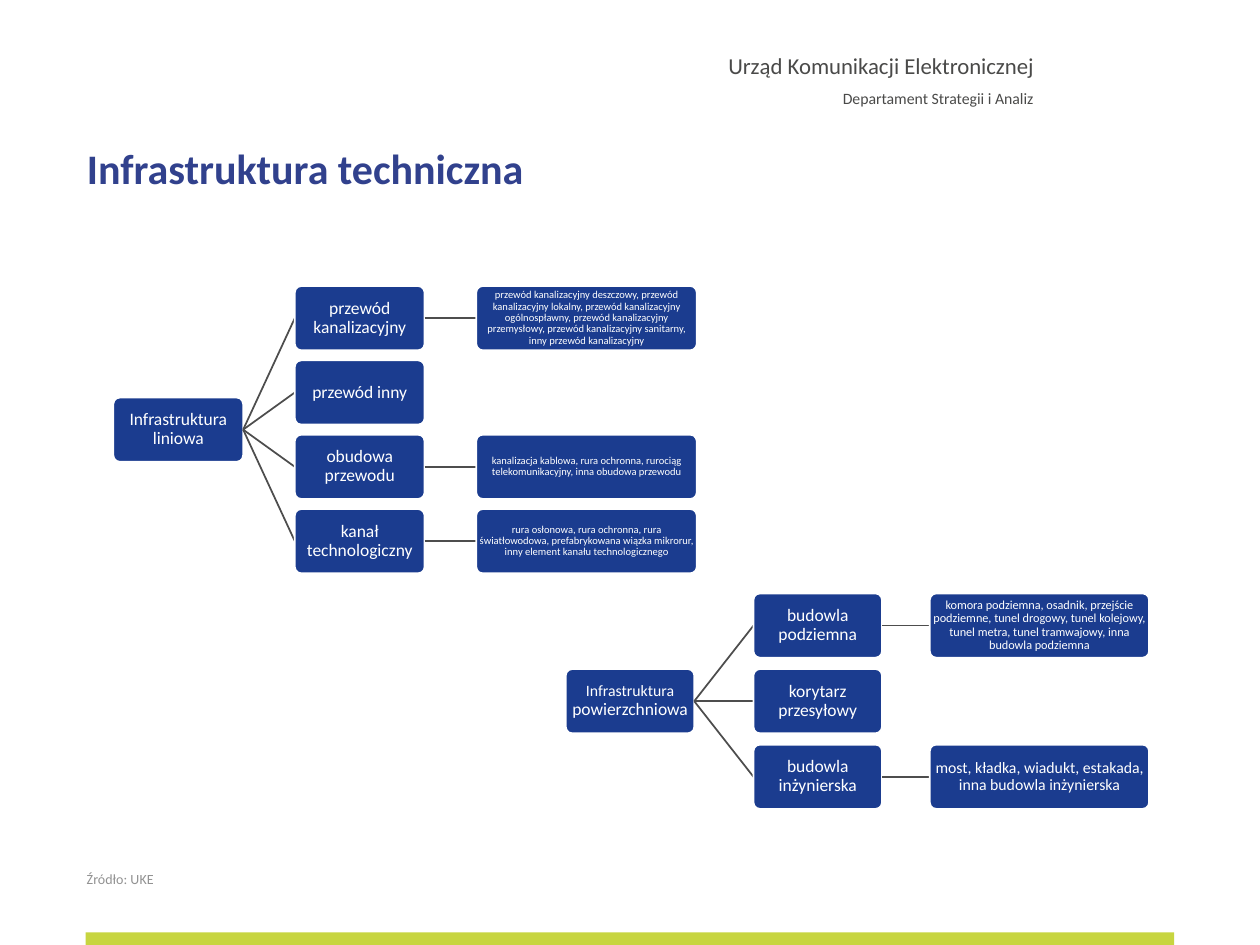
"""Build the slide showing the two branches of technical infrastructure."""
from pptx import Presentation
from pptx.dml.color import RGBColor
from pptx.enum.shapes import MSO_CONNECTOR as Connector, MSO_SHAPE as Shape
from pptx.enum.text import MSO_ANCHOR as Anchor, MSO_AUTO_SIZE as AutoSize, PP_ALIGN as Align
from pptx.oxml.ns import qn
from pptx.util import Inches, Pt
from lxml import etree

LINEAR = [
    ("przewód kanalizacyjny", "przewód kanalizacyjny deszczowy, przewód kanalizacyjny lokalny, "
     "przewód kanalizacyjny ogólnospławny, przewód kanalizacyjny przemysłowy, "
     "przewód kanalizacyjny sanitarny, inny przewód kanalizacyjny", 6),
    ("przewód inny", None, None),
    ("obudowa przewodu", "kanalizacja kablowa, rura ochronna, rurociąg telekomunikacyjny, "
     "inna obudowa przewodu", 6),
    ("kanał technologiczny", "rura osłonowa, rura ochronna, rura światłowodowa, "
     "prefabrykowana wiązka mikrorur, inny element kanału technologicznego", 6),
]
SURFACE = [
    ("budowla podziemna", "komora podziemna, osadnik, przejście podziemne, tunel drogowy, "
     "tunel kolejowy, tunel metra, tunel tramwajowy, inna budowla podziemna", 7),
    ("korytarz przesyłowy", None, None),
    ("budowla inżynierska", "most, kładka, wiadukt, estakada, inna budowla inżynierska", 9),
]


def color(value):
    return RGBColor.from_string(value)


class SlideBuilder:
    font = "Calibri"
    navy, white, gray = "1B3C8F", "FFFFFF", "4D4D4D"
    box_height = 0.51

    def __init__(self, presentation):
        self.slide = presentation.slides.add_slide(presentation.slide_layouts[5])

    def style(self, run, size, hex_color, bold=False):
        run.font.name = self.font
        run.font.size = Pt(size)
        run.font.bold = bold
        run.font.color.rgb = color(hex_color)

    def title(self, text, left, top, width, height):
        shape = self.slide.shapes.title
        shape.left, shape.top = Inches(left), Inches(top)
        shape.width, shape.height = Inches(width), Inches(height)
        frame = shape.text_frame
        frame.text = text
        frame.auto_size = AutoSize.NONE
        frame.vertical_anchor = Anchor.TOP
        frame.margin_left, frame.margin_right = 0, Inches(0.1)
        frame.margin_top = frame.margin_bottom = Inches(0.2)
        paragraph = frame.paragraphs[0]
        paragraph.alignment = Align.LEFT
        paragraph.line_spacing = 0.9
        self.style(paragraph.runs[0], 24, "31418D", bold=True)

    def text(self, lines, left, top, width, height, hex_color, align=Align.LEFT):
        shape = self.slide.shapes.add_textbox(
            Inches(left), Inches(top), Inches(width), Inches(height))
        frame = shape.text_frame
        frame.word_wrap = True
        frame.text = "\n".join(text for text, _, _ in lines)
        for paragraph, (_, size, spacing) in zip(frame.paragraphs, lines):
            paragraph.alignment = align
            paragraph.line_spacing = spacing
            self.style(paragraph.runs[0], size, hex_color)

    def bar(self, left, top, width, height, hex_color):
        shape = self.slide.shapes.add_shape(
            Shape.RECTANGLE, Inches(left), Inches(top), Inches(width), Inches(height))
        shape.shadow.inherit = False
        shape.fill.solid()
        shape.fill.fore_color.rgb = color(hex_color)
        shape.line.fill.background()

    def box(self, parts, left, top, width, margin=0.01):
        shape = self.slide.shapes.add_shape(
            Shape.ROUNDED_RECTANGLE, Inches(left), Inches(top),
            Inches(width), Inches(self.box_height))
        shape.adjustments[0] = 0.1
        shape.shadow.inherit = False
        shape.fill.solid()
        shape.fill.fore_color.rgb = color(self.navy)
        shape.line.color.rgb = color(self.white)
        shape.line.width = Pt(1)
        frame = shape.text_frame
        frame.word_wrap = True
        frame.vertical_anchor = Anchor.MIDDLE
        frame.margin_left = frame.margin_right = Inches(margin)
        frame.margin_top = frame.margin_bottom = Inches(margin)
        paragraph = frame.paragraphs[0]
        paragraph.alignment = Align.CENTER
        paragraph.line_spacing = 0.9
        for text, size in parts:
            run = paragraph.add_run()
            run.text = text
            self.style(run, size, self.white)
        return shape

    def child(self, parent, parts, left, top, width, margin=0.01):
        connector = self.slide.shapes.add_connector(Connector.STRAIGHT, 0, 0, 0, 0)
        connector.line.color.rgb = color(self.gray)
        connector.line.width = Pt(1)
        etree.SubElement(connector._element.spPr, qn("a:effectLst"))
        shape = self.box(parts, left, top, width, margin)
        connector.begin_connect(parent, 3)
        connector.end_connect(shape, 1)
        return shape

    def tree(self, root_parts, branches, columns, widths, top, pitch):
        root_top = top + pitch * (len(branches) - 1) / 2
        root = self.box(root_parts, columns[0], root_top, widths[0])
        for row, (name, detail, size) in enumerate(branches):
            row_top = top + row * pitch
            branch = self.child(root, [(name, 10)], columns[1], row_top, widths[0])
            if detail:
                self.child(branch, [(detail, size)], columns[2], row_top, widths[1], margin=0)


def main():
    presentation = Presentation()
    presentation.slide_width, presentation.slide_height = Inches(10), Inches(7.5)
    builder = SlideBuilder(presentation)
    builder.bar(0.68, 7.4, 8.64, 0.1, "C7D540")
    builder.text([("Urząd Komunikacji Elektronicznej", 13, None),
                  ("Departament Strategii i Analiz", 9, 1.5)],
                 1.46, 0.36, 6.84, 0.55, "4A4A49", Align.RIGHT)
    builder.text([("Źródło: UKE", 8, None)], 0.59, 6.86, 1.57, 0.24, "929292")
    builder.title("Infrastruktura techniczna", 0.69, 0.98, 8.62, 0.92)
    builder.tree([("Infrastruktura liniowa", 10)], LINEAR,
                 (0.9, 2.34, 3.78), (1.03, 1.75), 2.27, 0.59)
    builder.tree([("Infrastruktura ", 9), ("powierzchniowa", 10)], SURFACE,
                 (4.49, 5.98, 7.38), (1.02, 1.74), 4.71, 0.6)
    presentation.save("out.pptx")


if __name__ == "__main__":
    main()
